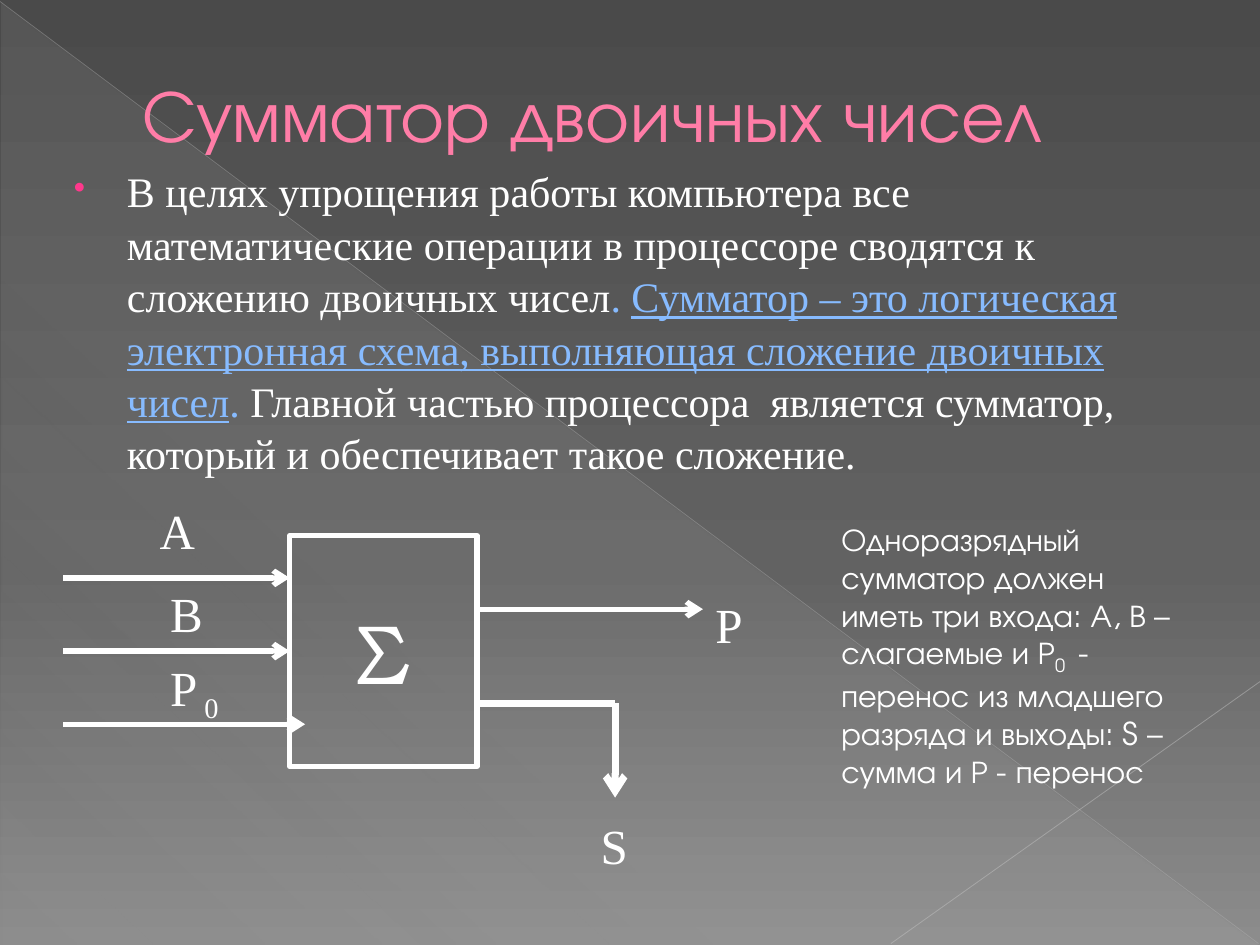
"""Builds a slide on the binary adder with its block diagram."""
from lxml.etree import SubElement
from pptx import Presentation
from pptx.dml.color import RGBColor
from pptx.enum.shapes import MSO_CONNECTOR, MSO_SHAPE
from pptx.enum.text import MSO_ANCHOR, PP_ALIGN
from pptx.oxml.ns import qn
from pptx.util import Cm, Pt

WHITE = RGBColor(0xFF, 0xFF, 0xFF)
PINK = RGBColor(0xFF, 0x7D, 0xA7)
ROSE = RGBColor(0xFF, 0x38, 0x8C)
BLUE = RGBColor(0x87, 0xBB, 0xFF)
DARK = RGBColor(0x4A, 0x4A, 0x4A)
GRAY = RGBColor(0x62, 0x62, 0x62)
LIGHT = RGBColor(0x8C, 0x8C, 0x8C)
PALE = RGBColor(0xD2, 0xD2, 0xD2)
EDGE = RGBColor(0xBF, 0xBF, 0xBF)
RAY = RGBColor(0xC6, 0xC6, 0xC6)
SANS, SERIF, SIGN = "TeX Gyre Adventor", "Times New Roman", "TeX Gyre Bonum"


def node(owner, tag, **attrs):
    item = SubElement(owner, qn(tag))
    for key, value in attrs.items():
        item.set(key, str(value))
    return item


def blend(old, stops, angle):
    fill = node(old.getparent(), "a:gradFill", rotWithShape=1)
    old.getparent().replace(old, fill)
    steps = node(fill, "a:gsLst")
    for place, color, alpha in stops:
        step = node(steps, "a:gs", pos=place * 1000)
        tint = node(step, "a:srgbClr", val=color)
        node(tint, "a:alpha", val=alpha * 1000)
    node(fill, "a:lin", ang=angle * 60000, scaled=0)


class Painter:
    def __init__(self, slide):
        self.slide = slide
        self.shapes = slide.shapes

    def backdrop(self, stops):
        self.slide.background.fill.solid()
        blend(self.slide.element.xpath(".//p:bgPr/a:solidFill")[0], stops, 90)

    def shape(self, kind, *box):
        shape = self.shapes.add_shape(kind, *map(Cm, box))
        shape.shadow.inherit = False
        return shape

    def wedge(self, box, stops, angle):
        shape = self.shape(MSO_SHAPE.RIGHT_TRIANGLE, *box)
        shape.line.fill.background()
        shape.fill.solid()
        blend(shape.element.xpath("./p:spPr/a:solidFill")[0], stops, angle)

    def block(self, box, sign):
        shape = self.shape(MSO_SHAPE.RECTANGLE, *box)
        shape.fill.background()
        shape.line.color.rgb = WHITE
        shape.line.width = Pt(3)
        shape.text_frame.vertical_anchor = MSO_ANCHOR.MIDDLE
        par = shape.text_frame.paragraphs[0]
        par.alignment = PP_ALIGN.CENTER
        self.run(par, sign, 48, SIGN)
        return shape

    def run(self, par, text, size, face, color=WHITE, under=False, base=0):
        run = par.add_run()
        run.text = text
        font = run.font
        font.size, font.name, font.color.rgb = Pt(size), face, color
        if under:
            font.underline = True
        if base:
            run._r.get_or_add_rPr().set("baseline", str(base * 1000))

    def text(self, box, size, face, *runs):
        frame = self.shapes.add_textbox(*map(Cm, box)).text_frame
        frame.word_wrap = True
        par = frame.paragraphs[0]
        for text, style in runs:
            self.run(par, text, size, face, **style)
        return frame

    def indent(self, par, left, first=0):
        props = par._p.get_or_add_pPr()
        props.set("marL", str(Cm(left)))
        props.set("indent", str(Cm(first)))
        return props

    def bullet(self, par):
        par.line_spacing = 1.04
        par.space_before = Pt(4.8)
        props = self.indent(par, 1.24, -1.07)
        node(node(props, "a:buClr"), "a:srgbClr", val=ROSE)
        node(props, "a:buSzPct", val=80000)
        node(props, "a:buChar", char="•")

    def line(self, start, end, width=3, color=WHITE, alpha=100, arrow=False):
        line = self.shapes.add_connector(
            MSO_CONNECTOR.STRAIGHT, *map(Cm, start + end))
        line.line.color.rgb = color
        line.line.width = Pt(width)
        if alpha < 100:
            tint = line.element.xpath(".//a:ln//a:srgbClr")[0]
            node(tint, "a:alpha", val=alpha * 1000)
        if arrow:
            node(line.line._get_or_add_ln(), "a:tailEnd", type="arrow")
        node(line.element.spPr, "a:effectLst")
        return line


def main():
    deck = Presentation()
    deck.slide_width, deck.slide_height = Cm(25.4), Cm(19.05)
    art = Painter(deck.slides.add_slide(deck.slide_layouts[6]))

    art.backdrop([(0, DARK, 100), (60, GRAY, 100), (100, LIGHT, 100)])
    art.wedge((0.03, 0.05, 25.35, 19),
              [(0, PALE, 10), (70, PALE, 8), (100, PALE, 1)], 133)
    art.line((0, 0.03), (25.37, 19.02), 0.39, EDGE, 35)
    art.line((25.4, 13.74), (17.96, 19.02), 0.47, RAY, 45)

    title = art.text((1.27, 0.74, 22.86, 3.07), 42, SANS,
                     ("Сумматор двоичных чисел", {"color": PINK}))
    title.vertical_anchor = MSO_ANCHOR.MIDDLE
    art.indent(title.paragraphs[0], 1.35)

    body = art.text(
        (1.07, 3.18, 22.86, 6.2), 24, SERIF,
        ("В целях упрощения работы компьютера все математические операции "
         "в процессоре сводятся к сложению двоичных чисел", {}),
        (". ", {"color": BLUE}),
        ("Сумматор – это логическая электронная схема, выполняющая "
         "сложение двоичных чисел", {"color": BLUE, "under": True}),
        (". ", {"color": BLUE}),
        ("Главной частью процессора  является сумматор, который и "
         "обеспечивает такое сложение.", {}))
    art.bullet(body.paragraphs[0])

    left, top, wide, high = 5.84, 10.8, 3.78, 4.65
    right, mid = left + wide, top + high / 2
    adder = art.block((left, top, wide, high), "Σ")
    for tip, y in (left, 11.65), (left, mid), (6.15, 14.6):
        wire = art.line((1.27, y), (tip, y), arrow=True)
        if y == mid:
            wire.end_connect(adder, 1)
    art.line((right, 12.28), (14.17, 12.28), arrow=True)
    turn, low = 12.4, 14.18
    art.line((right, low), (turn, low), 4)
    art.line((turn, low), (turn, 16.08), 4, arrow=True)

    sub = {"base": -25}
    for x, y, width, *runs in (
            (2.97, 9.96, 1.27, ("А", {})),
            (3.18, 11.63, 1.27, ("В", {})),
            (3.18, 13.13, 1.9, ("Р", {}), (" 0", sub)),
            (14.17, 11.86, 1.9, ("Р", {})),
            (11.86, 16.31, 1.27, ("S", {}))):
        art.text((x, y, width, 1.45), 28, SERIF, *runs)

    art.text((16.71, 10.36, 7.19, 6.4), 18, SANS,
             ("Одноразрядный сумматор должен иметь три входа: "
              "А, В – слагаемые и Р", {}),
             ("0 ", sub),
             (" - перенос из младшего разряда и выходы: "
              "S – сумма и Р - перенос", {}))
    deck.save("out.pptx")


if __name__ == "__main__":
    main()
